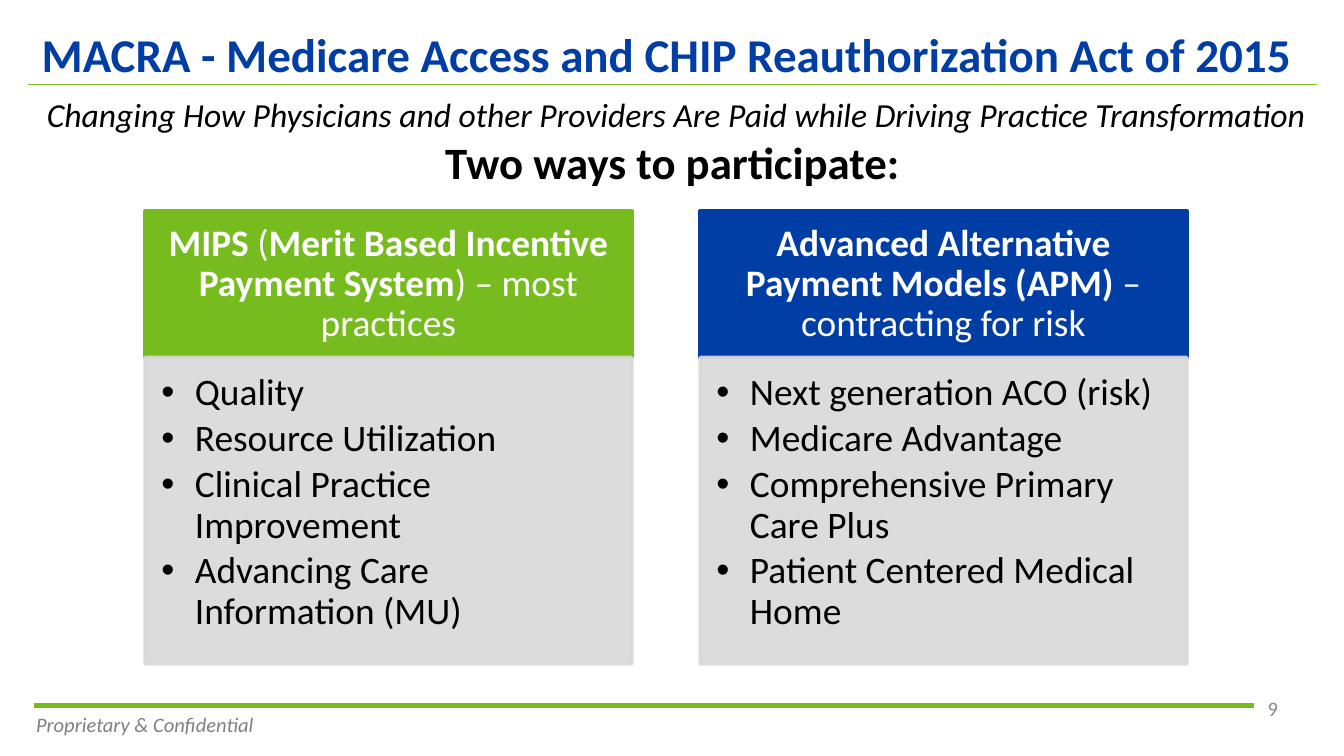
from lxml import etree
from pptx import Presentation
from pptx.dml.color import RGBColor
from pptx.enum import shapes, text
from pptx.oxml.ns import qn
from pptx.util import Inches, Pt

COLORS = {"green": "77BC1F", "blue": "003DA5", "panel": "D9D9D9", "white": "FFFFFF",
          "black": "000000", "footer": "808080", "number": "898989"}
LEFT, CENTER = text.PP_ALIGN.LEFT, text.PP_ALIGN.CENTER
TOP, MIDDLE, BOTTOM = text.MSO_ANCHOR.TOP, text.MSO_ANCHOR.MIDDLE, text.MSO_ANCHOR.BOTTOM


def write(p, content, size=20, color="black", bold=False, italic=False, align=LEFT):
    """Add one formatted run to a paragraph."""
    p.alignment = align
    r = p.add_run()
    r.text = content
    r.font.name, r.font.size = "Calibri", Pt(size)
    r.font.bold, r.font.italic = bold, italic
    r.font.color.rgb = RGBColor.from_string(COLORS[color])


def setup(sp, box, anchor=TOP, insets=(0.1, 0.05, 0.1, 0.05), color=None):
    """Place a shape, prepare its text frame and colour it."""
    sp.left, sp.top, sp.width, sp.height = map(Inches, box)
    tf = sp.text_frame
    tf.word_wrap, tf.auto_size = True, text.MSO_AUTO_SIZE.NONE
    tf.vertical_anchor = anchor
    tf.margin_left, tf.margin_top, tf.margin_right, tf.margin_bottom = map(Inches, insets)
    if color:
        sp.fill.solid()
        sp.line.fill.solid()
        sp.line.width = Pt(2)
        for fill in (sp.fill, sp.line.fill):
            fill.fore_color.rgb = RGBColor.from_string(COLORS[color])
    return tf


# 16:9 slide
prs = Presentation()
prs.slide_width, prs.slide_height = Inches(10), Inches(10 * 9 / 16)
s = prs.slides.add_slide(prs.slide_layouts.get_by_name("Two Content"))

# Rules above the footer and below the title
for x1, x2, y, width in [(0.25, 9.33, 5.25, 2.25), (0.21, 9.8, 0.63, 0.75)]:
    line = s.shapes.add_connector(shapes.MSO_CONNECTOR.STRAIGHT,
                                  Inches(x1), Inches(y), Inches(x2), Inches(y))
    line.line.color.rgb = RGBColor.from_string(COLORS["green"])
    line.line.width = Pt(width)
    etree.SubElement(line._element.spPr, qn("a:effectLst"))

# Footer and page number
tf = setup(s.shapes.add_textbox(0, 0, 0, 0), (9.26, 5.21, 0.42, 0.2), BOTTOM)
write(tf.paragraphs[0], "9", size=11, color="number", align=CENTER)
tf = setup(s.shapes.add_textbox(0, 0, 0, 0), (0.17, 5.25, 2.33, 0.29))
write(tf.paragraphs[0], "Proprietary & Confidential", size=11, color="footer", italic=True)

# Title and subtitle
tf = setup(s.shapes.title, (0.21, 0.12, 9.58, 0.56), MIDDLE)
write(tf.paragraphs[0], "MACRA - Medicare Access and CHIP Reauthorization Act of 2015",
      size=25.2, color="blue", bold=True)
tf = setup(s.shapes.add_textbox(0, 0, 0, 0), (0.25, 0.65, 9.58, 0.81))
write(tf.paragraphs[0], "Changing How Physicians and other Providers Are Paid "
      "while Driving Practice Transformation", size=18, italic=True)
write(tf.add_paragraph(), "Two ways to participate: ", size=24, bold=True, align=CENTER)

# Two columns: a heading block over a bulleted panel
columns = [
    ("green",
     [("MIPS", True), (" (", False), ("Merit Based Incentive Payment System", True),
      (") – most practices", False)],
     ["Quality", "Resource Utilization", "Clinical Practice Improvement",
      "Advancing Care Information (MU)"]),
    ("blue",
     [("Advanced Alternative Payment Models (APM) ", True), ("– contracting for risk", False)],
     ["Next generation ACO (risk)", "Medicare Advantage", "Comprehensive Primary Care Plus",
      "Patient Centered Medical Home"]),
]
for i, (color, heading, items) in enumerate(columns):
    x = 1.08 + i * 4.13

    head = s.shapes.add_shape(shapes.MSO_SHAPE.RECTANGLE, 0, 0, 0, 0)
    head.shadow.inherit = False
    tf = setup(head, (x, 1.57, 3.62, 1.09), MIDDLE, (0.16, 0.09, 0.16, 0.09), color)
    p = tf.paragraphs[0]
    p.line_spacing = 0.9
    for content, bold in heading:
        write(p, content, color="white", bold=bold, align=CENTER)

    body = s.placeholders[i + 1]
    tf = setup(body, (x, 2.66, 3.62, 2.28), TOP, (0.12, 0.12, 0.16, 0.17), "panel")
    for clr in body._element.spPr.iter(qn("a:srgbClr")):
        etree.SubElement(clr, qn("a:alpha"), val="90000")
    s.shapes._spTree.append(body._element)  # panel overlaps the heading's edge
    for n, item in enumerate(items):
        p = tf.paragraphs[0] if n == 0 else tf.add_paragraph()
        pPr = p._p.get_or_add_pPr()
        pPr.set("marL", str(Inches(0.25)))
        pPr.set("indent", str(-Inches(0.25)))
        etree.SubElement(pPr, qn("a:buChar"), char="•")
        p.line_spacing, p.space_before, p.space_after = 0.9, Pt(0), Pt(3)
        write(p, item)

prs.save("out.pptx")
